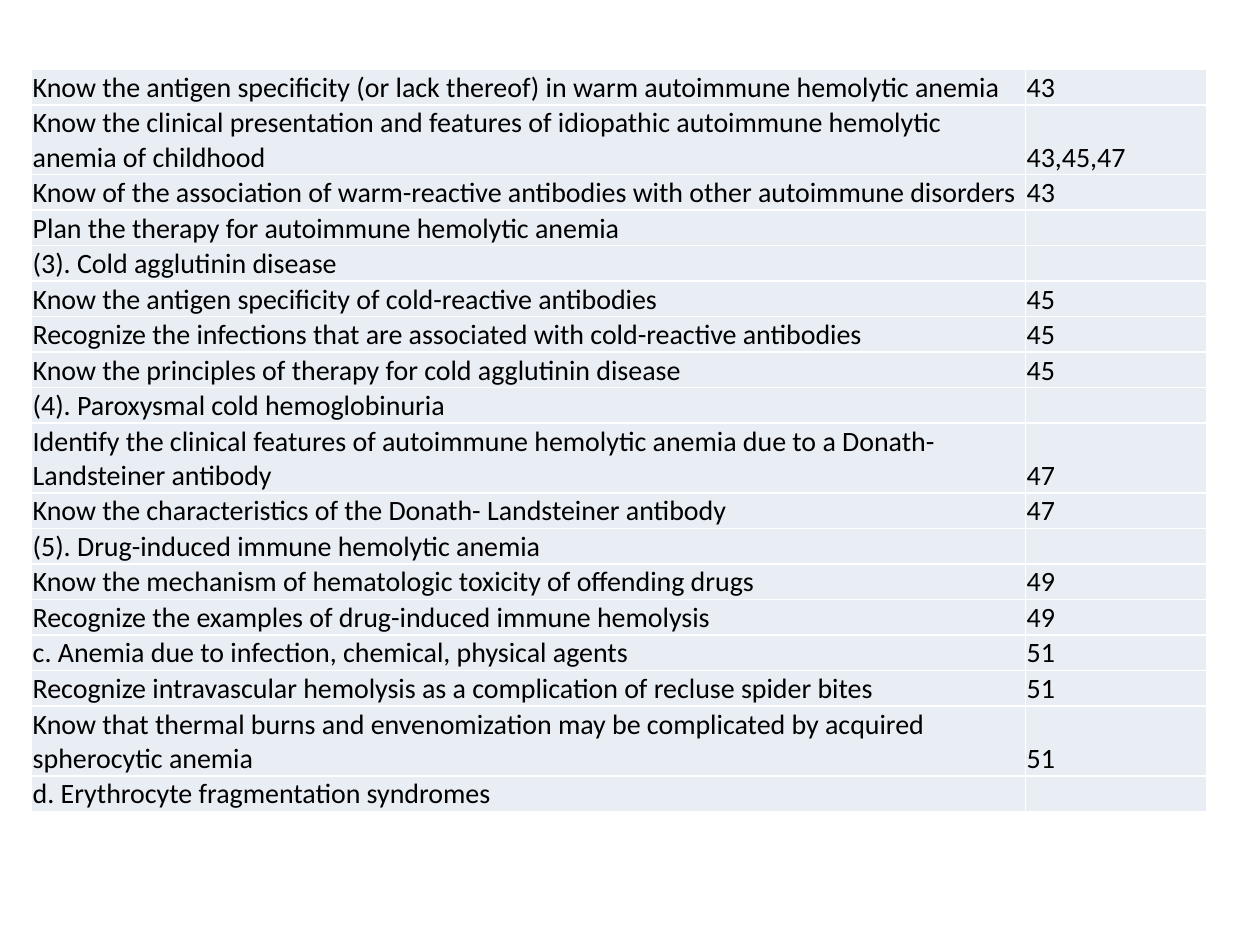
from typing import NamedTuple

from lxml import etree
from pptx import Presentation
from pptx import util as u
from pptx.dml.color import RGBColor
from pptx.enum import text
from pptx.oxml import ns

COLORS = {"cell": "E9EDF4", "border": "FFFFFF", "text": "000000"}
FONT_SIZE = u.Pt(16)
LINE_HEIGHT = 19.5
INSET = 0.72
COLUMN_WIDTHS = (568, 103.7)


class Objective(NamedTuple):
    topic: str
    pages: str = ""
    lines: int = 1


OBJECTIVES = [
    Objective("Know the antigen specificity (or lack thereof) in warm autoimmune hemolytic anemia", "43"),
    Objective("Know the clinical presentation and features of idiopathic autoimmune hemolytic "
              "anemia of childhood", "43,45,47", 2),
    Objective("Know of the association of warm-reactive antibodies with other autoimmune disorders", "43"),
    Objective("Plan the therapy for autoimmune hemolytic anemia"),
    Objective("(3). Cold agglutinin disease"),
    Objective("Know the antigen specificity of cold-reactive antibodies", "45"),
    Objective("Recognize the infections that are associated with cold-reactive antibodies", "45"),
    Objective("Know the principles of therapy for cold agglutinin disease", "45"),
    Objective("(4). Paroxysmal cold hemoglobinuria"),
    Objective("Identify the clinical features of autoimmune hemolytic anemia due to a "
              "Donath-Landsteiner antibody", "47", 2),
    Objective("Know the characteristics of the Donath- Landsteiner antibody", "47"),
    Objective("(5). Drug-induced immune hemolytic anemia"),
    Objective("Know the mechanism of hematologic toxicity of offending drugs", "49"),
    Objective("Recognize the examples of drug-induced immune hemolysis", "49"),
    Objective("c. Anemia due to infection, chemical, physical agents", "51"),
    Objective("Recognize intravascular hemolysis as a complication of recluse spider bites", "51"),
    Objective("Know that thermal burns and envenomization may be complicated by acquired "
              "spherocytic anemia", "51", 2),
    Objective("d. Erythrocyte fragmentation syndromes"),
]


def add_borders(cell) -> None:
    properties = cell._tc.get_or_add_tcPr()
    for side in ("a:lnL", "a:lnR", "a:lnT", "a:lnB"):
        border = etree.SubElement(properties, ns.qn(side), w=str(u.Pt(1)))
        fill = etree.SubElement(border, ns.qn("a:solidFill"))
        etree.SubElement(fill, ns.qn("a:srgbClr"), val=COLORS["border"])


def fill_cell(cell, wording: str) -> None:
    add_borders(cell)
    cell.fill.solid()
    cell.fill.fore_color.rgb = RGBColor.from_string(COLORS["cell"])
    cell.margin_left = cell.margin_right = cell.margin_top = u.Pt(INSET)
    cell.margin_bottom = u.Pt(0)
    cell.vertical_anchor = text.MSO_ANCHOR.BOTTOM
    paragraph = cell.text_frame.paragraphs[0]
    if wording:
        paragraph.text = wording
    else:
        etree.SubElement(paragraph._p, ns.qn("a:endParaRPr"), sz=str(FONT_SIZE.centipoints))
    paragraph.font.size = FONT_SIZE
    paragraph.font.name = "Calibri"
    paragraph.font.color.rgb = RGBColor.from_string(COLORS["text"])


def add_objectives(slide, objectives: list[Objective]) -> None:
    heights = [objective.lines * LINE_HEIGHT + INSET for objective in objectives]
    table = slide.shapes.add_table(
        len(objectives), len(COLUMN_WIDTHS),
        u.Pt(18), u.Pt(39.6), u.Pt(sum(COLUMN_WIDTHS)), u.Pt(sum(heights)),
    ).table
    table.first_row = False
    table.horz_banding = False
    for column, width in zip(table.columns, COLUMN_WIDTHS):
        column.width = u.Pt(width)
    for row, height, objective in zip(table.rows, heights, objectives):
        row.height = u.Pt(height)
        for cell, wording in zip(row.cells, (objective.topic, objective.pages)):
            fill_cell(cell, wording)


def main() -> None:
    deck = Presentation()
    deck.slide_width, deck.slide_height = u.Pt(720), u.Pt(540)
    slide = deck.slides.add_slide(deck.slide_layouts[6])
    add_objectives(slide, OBJECTIVES)
    deck.save("out.pptx")


if __name__ == "__main__":
    main()
